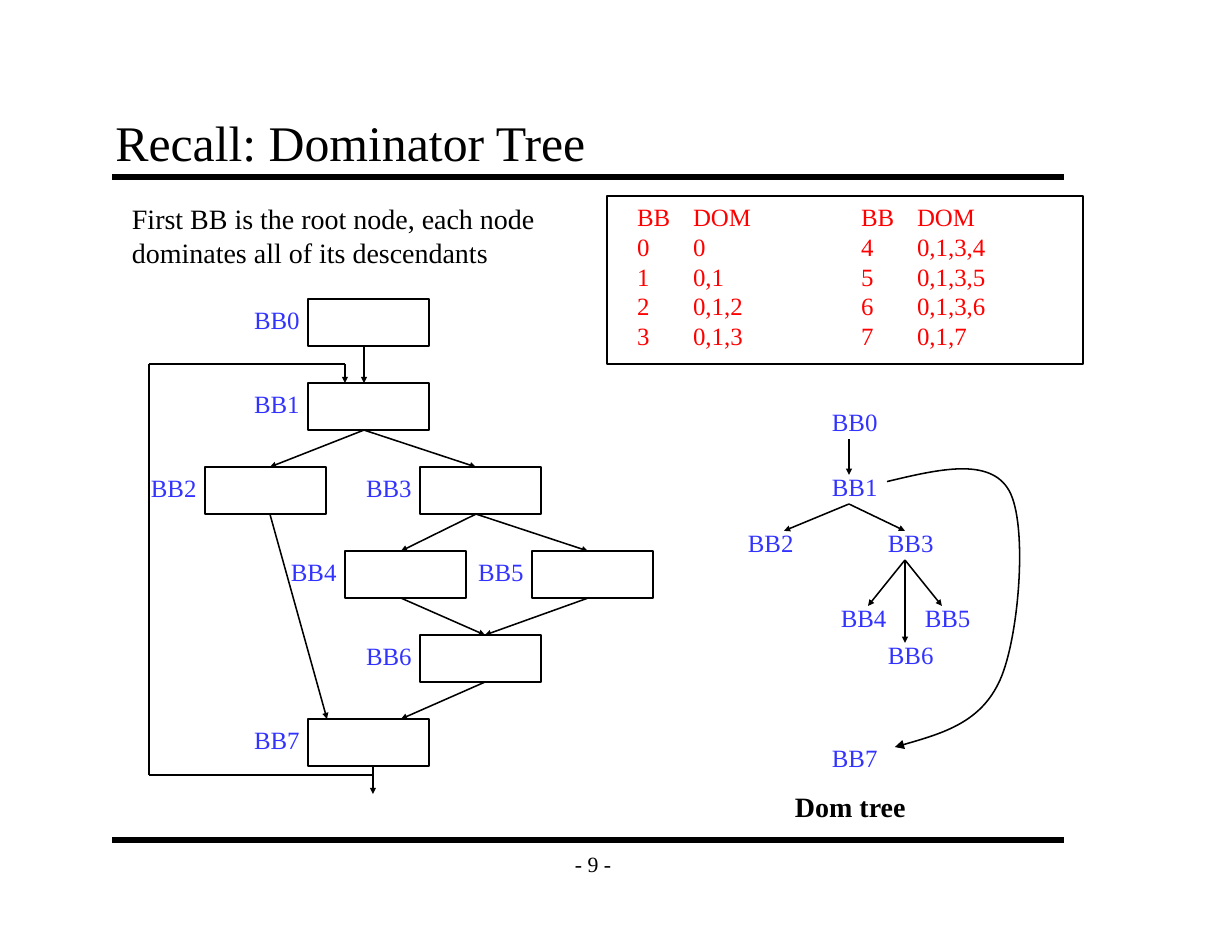
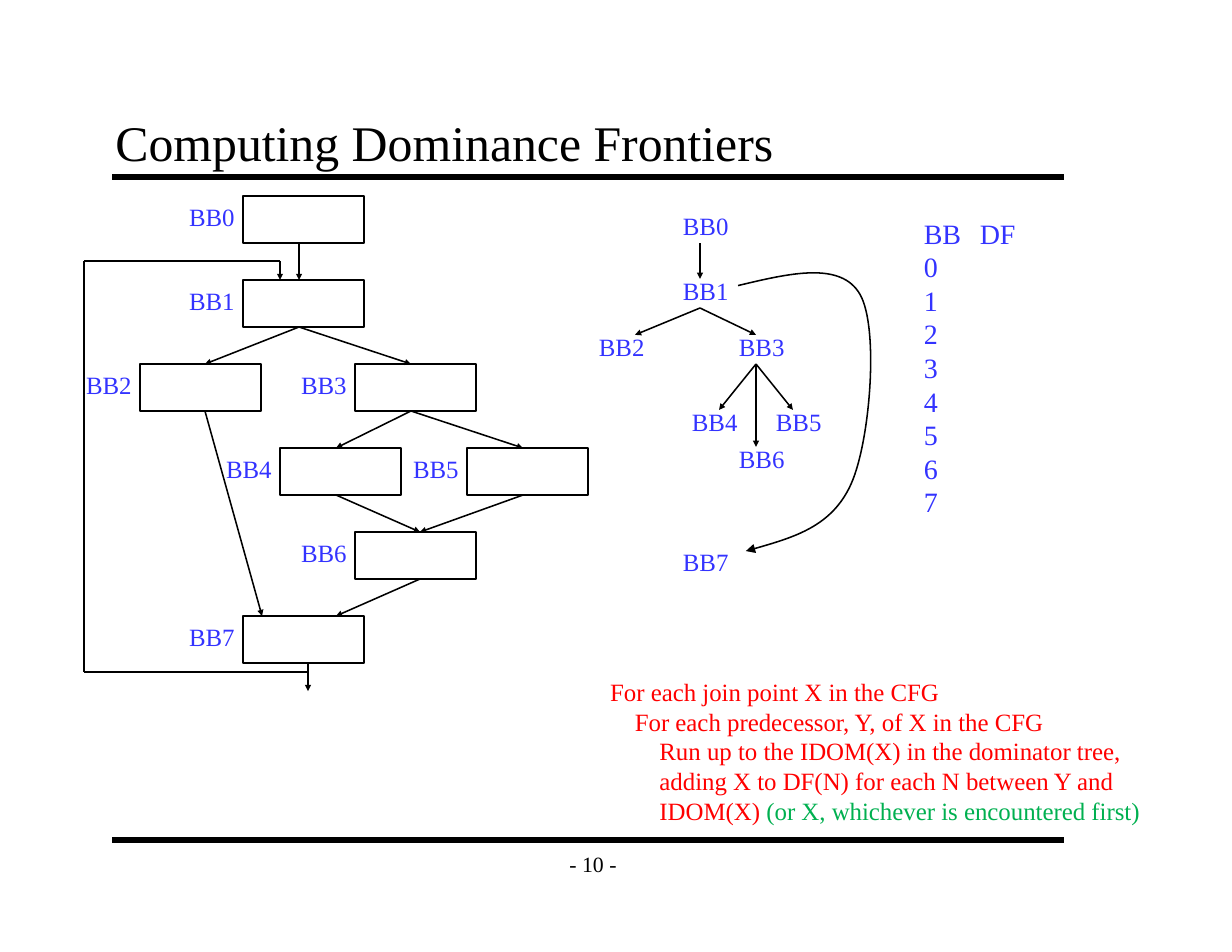
from pptx import Presentation
from pptx.dml.color import RGBColor
from pptx.enum import shapes, text
from pptx.oxml import ns, xmlchemy
from pptx.util import Inches, Pt

FONT = "Times New Roman"
BLACK, BLUE, RED, GREEN = "000000", "3333FF", "FF0000", "00B050"
BLOCK_W, BLOCK_H = 1.08, 0.42

# Flow graph: block corners, and edges as (source, target, arrival offset on the target)
CFG_BLOCKS = {"BB0": (1.5, 0), "BB1": (1.5, 0.75), "BB2": (0.58, 1.5), "BB3": (2.5, 1.5),
              "BB4": (1.83, 2.25), "BB5": (3.5, 2.25), "BB6": (2.5, 3), "BB7": (1.5, 3.75)}
CFG_EDGES = [("BB0", "BB1", 0.5), ("BB1", "BB2", 0.58), ("BB1", "BB3", 0.5),
             ("BB3", "BB4", 0.5), ("BB3", "BB5", 0.5), ("BB4", "BB6", 0.58),
             ("BB5", "BB6", 0.58), ("BB6", "BB7", 0.83), ("BB2", "BB7", 0.17)]
CFG_EXITS = {"BB2": 0.58, "BB6": 0.58}
BACK_EDGE = [(2.08, 4.25), (0.08, 4.25), (0.08, 0.58), (1.83, 0.58), (1.83, 0.75)]

# Dominator tree: label corners, and edges as above
DOM_LABELS = {"BB0": (0.75, 0), "BB1": (0.75, 0.58), "BB2": (0, 1.08), "BB3": (1.25, 1.08),
              "BB4": (0.83, 1.75), "BB5": (1.58, 1.75), "BB6": (1.25, 2.08), "BB7": (0.75, 3)}
DOM_EDGES = [("BB0", "BB1", 0.25), ("BB1", "BB2", 0.42), ("BB1", "BB3", 0.25),
             ("BB3", "BB4", 0.34), ("BB3", "BB6", 0.25), ("BB3", "BB5", 0.25)]
DOM_CURVE = [(1.34, 0.72), (1.8, 0.61), (2.26, 0.5), (2.43, 0.8), (2.6, 1.1),
             (2.52, 2.11), (2.35, 2.49), (2.18, 2.87), (1.8, 2.98), (1.41, 3.09)]


def rgb(value):
    return RGBColor.from_string(value)


def add_run(paragraph, words, size, color=BLACK, bold=None):
    run = paragraph.add_run()
    run.text = words
    run.font.name = FONT
    run.font.size = Pt(size)
    run.font.bold = bold
    run.font.color.rgb = rgb(color)


def set_frame(frame, anchor):
    frame.word_wrap = True
    frame.auto_size = text.MSO_AUTO_SIZE.NONE
    frame.vertical_anchor = anchor
    frame.margin_left = frame.margin_right = Inches(0.11)
    frame.margin_top = frame.margin_bottom = Inches(0.06)


def add_lines(slide, box, lines, size, color=BLACK, bold=None):
    """Add a text box with one paragraph per line and return its text frame."""
    frame = slide.shapes.add_textbox(*map(Inches, box)).text_frame
    frame.word_wrap = True
    for i, line in enumerate(lines):
        paragraph = frame.add_paragraph() if i else frame.paragraphs[0]
        add_run(paragraph, line, size, color, bold)
    return frame


def add_label(slide, x, y, name):
    add_lines(slide, (x, y, 0.7, 0.37), [name], 16, BLUE)


def add_arrowhead(shape, size):
    line = shape.line._get_or_add_ln()
    head = xmlchemy.OxmlElement("a:tailEnd")
    for key, value in (("type", "triangle"), ("w", size), ("len", size)):
        head.set(key, value)
    line.append(head)


def add_line(slide, start, end, width=1, arrow=False):
    line = slide.shapes.add_connector(
        shapes.MSO_CONNECTOR.STRAIGHT, *map(Inches, (*start, *end)))
    line.line.color.rgb = rgb(BLACK)
    line.line.width = Pt(width)
    if arrow:
        add_arrowhead(line, "sm")
    line._element.spPr.append(xmlchemy.OxmlElement("a:effectLst"))


def add_block(slide, x, y, width=BLOCK_W, height=BLOCK_H):
    block = slide.shapes.add_shape(
        shapes.MSO_SHAPE.RECTANGLE, *map(Inches, (x, y, width, height)))
    block.shadow.inherit = False
    block.fill.background()
    block.line.color.rgb = rgb(BLACK)
    block.line.width = Pt(1)


def add_curve(slide, points):
    """Draw a chain of cubic curves: a start point, then three points per curve."""
    start, *rest = [(Inches(x), Inches(y)) for x, y in points]
    builder = slide.shapes.build_freeform(*start)
    builder.add_line_segments(rest, close=False)
    curve = builder.convert_to_shape()
    segments = list(curve._element.iter(ns.qn("a:lnTo")))
    for i in range(0, len(segments), 3):
        bezier = xmlchemy.OxmlElement("a:cubicBezTo")
        segments[i].addprevious(bezier)
        for segment in segments[i:i + 3]:
            bezier.append(segment[0])
            segment.getparent().remove(segment)
    curve.shadow.inherit = False
    curve.fill.background()
    curve.line.color.rgb = rgb(BLACK)
    curve.line.width = Pt(1)
    add_arrowhead(curve, "med")


def start_slide(prs, heading, number):
    """Add a slide with its title, the two rules and the page number."""
    slide = prs.slides.add_slide(prs.slide_layouts[5])
    title = slide.shapes.title
    title.left, title.top, title.width, title.height = map(Inches, (0.92, 0.92, 8.5, 0.67))
    set_frame(title.text_frame, text.MSO_ANCHOR.BOTTOM)
    paragraph = title.text_frame.paragraphs[0]
    paragraph.alignment = text.PP_ALIGN.LEFT
    add_run(paragraph, heading, 32)
    for y in (1.58, 7.5):
        add_line(slide, (1, y), (9.5, y), width=4)
    footer = add_lines(slide, (4.92, 7.5, 0.75, 0.42), [f"- {number} -"], 14)
    set_frame(footer, text.MSO_ANCHOR.MIDDLE)
    footer.paragraphs[0].alignment = text.PP_ALIGN.CENTER
    return slide


def add_flow_graph(slide, left, top):
    def at(x, y):
        return left + x, top + y

    for name, (x, y) in CFG_BLOCKS.items():
        add_block(slide, *at(x, y))
        add_label(slide, *at(x - 0.58, y), name)
    for source, target, arrival in CFG_EDGES:
        (x1, y1), (x2, y2) = CFG_BLOCKS[source], CFG_BLOCKS[target]
        add_line(slide, at(x1 + CFG_EXITS.get(source, 0.5), y1 + BLOCK_H),
                 at(x2 + arrival, y2), arrow=True)
    add_line(slide, at(2.08, 4.17), at(2.08, 4.42), arrow=True)
    for start, end in zip(BACK_EDGE, BACK_EDGE[1:]):
        add_line(slide, at(*start), at(*end), arrow=end == BACK_EDGE[-1])


def add_dominator_tree(slide, left, top):
    def at(x, y):
        return left + x, top + y

    for name, corner in DOM_LABELS.items():
        add_label(slide, *at(*corner), name)
    for source, target, arrival in DOM_EDGES:
        (x1, y1), (x2, y2) = DOM_LABELS[source], DOM_LABELS[target]
        add_line(slide, at(x1 + 0.25, y1 + 0.34), at(x2 + arrival, y2 + 0.08), arrow=True)
    add_curve(slide, [at(*point) for point in DOM_CURVE])


def add_dominator_sets(slide, left, top):
    halves = [["0\t0", "1\t0,1", "2\t0,1,2", "3\t0,1,3"],
              ["4\t0,1,3,4", "5\t0,1,3,5", "6\t0,1,3,6", "7\t0,1,7"]]
    add_block(slide, left, top, 4.25, 1.5)
    for i, rows in enumerate(halves):
        add_lines(slide, (left + 0.17 + 2 * i, top, 2, 1.44), ["BB\tDOM", *rows], 16, RED)


def add_algorithm(slide, left, top):
    steps = [(0, "For each join point X in the CFG"),
             (1, "For each predecessor, Y, of X in the CFG"),
             (2, "Run up to the IDOM(X) in the dominator tree,"),
             (2, "adding X to DF(N) for each N between Y and"),
             (2, "IDOM(X) ")]
    frame = add_lines(slide, (left, top, 5.2, 1.45), [step for _, step in steps], 16, RED)
    for paragraph, (level, _) in zip(frame.paragraphs, steps):
        paragraph._p.get_or_add_pPr().set("marL", str(Inches(0.22 * level)))
    add_run(frame.paragraphs[-1], "(or X, whichever is encountered first)", 16, GREEN)


def dominator_tree_slide(prs):
    slide = start_slide(prs, "Recall: Dominator Tree", 9)
    add_lines(slide, (1.08, 1.75, 4.1, 0.7),
              ["First BB is the root node, each node", "dominates all of its descendants"], 18)
    add_flow_graph(slide, 1.25, 2.67)
    add_dominator_sets(slide, 5.42, 1.75)
    add_dominator_tree(slide, 6.58, 3.58)
    add_lines(slide, (7, 7, 1.4, 0.4), ["Dom tree"], 18, bold=True)


def dominance_frontiers_slide(prs):
    slide = start_slide(prs, "Computing Dominance Frontiers", 10)
    add_flow_graph(slide, 0.67, 1.75)
    add_dominator_tree(slide, 5.25, 1.83)
    add_lines(slide, (8.15, 1.88, 1.7, 2.8), ["BB\tDF", *map(str, range(8))], 18, BLUE)
    add_algorithm(slide, 5.35, 5.99)


def main():
    prs = Presentation()
    prs.slide_width, prs.slide_height = Inches(11), Inches(8.5)
    dominator_tree_slide(prs)
    dominance_frontiers_slide(prs)
    prs.save("out.pptx")


if __name__ == "__main__":
    main()
